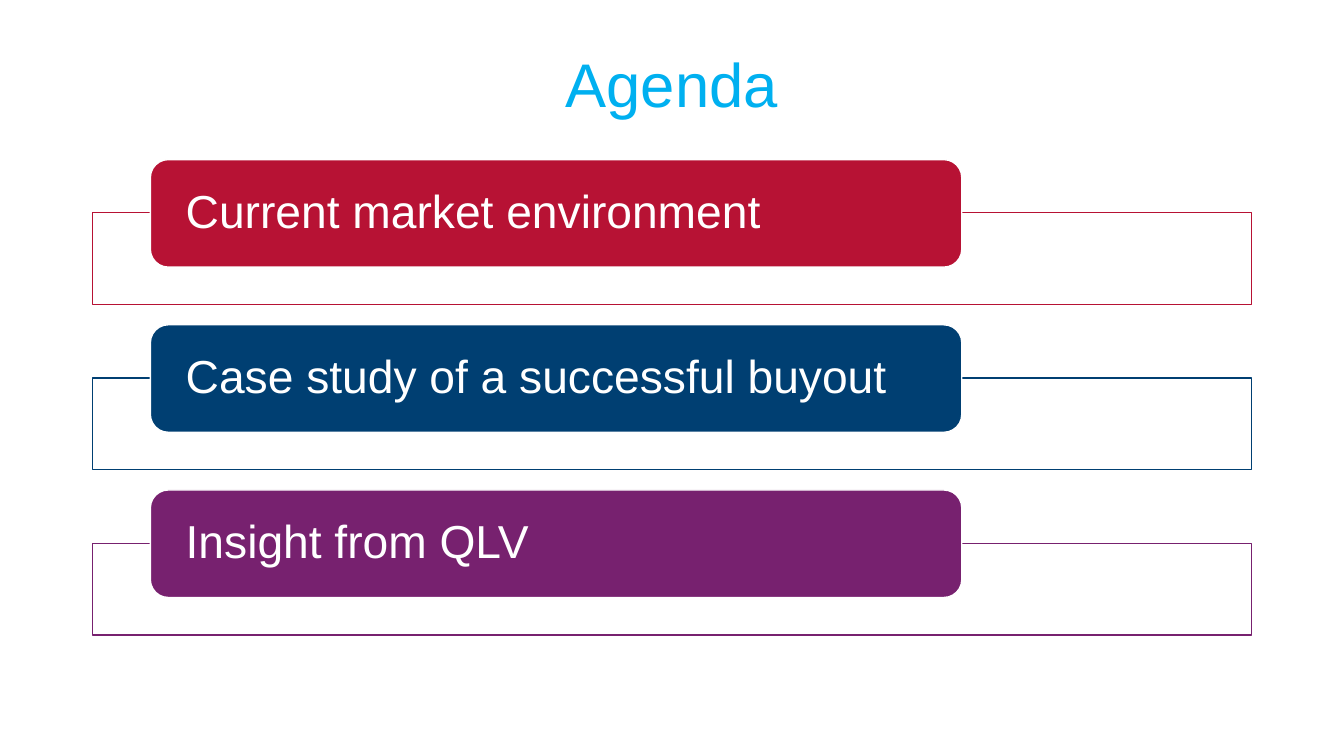
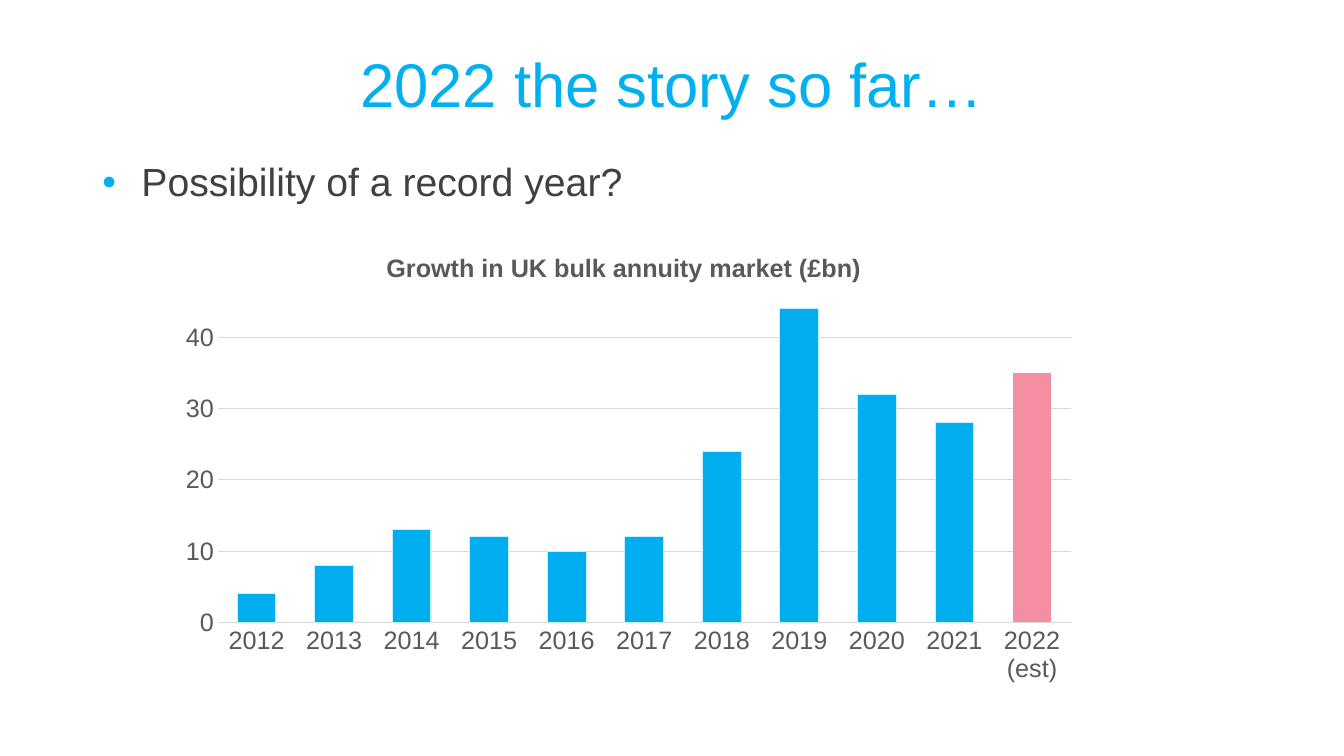
import pptx
import pptx.chart.data
import pptx.dml.color
import pptx.enum.chart
import pptx.enum.shapes
import pptx.enum.text
import pptx.oxml
import pptx.oxml.ns
import pptx.util

Pt = pptx.util.Pt
ALIGN = pptx.enum.text.PP_ALIGN
ANCHOR = pptx.enum.text.MSO_ANCHOR
SHAPE = pptx.enum.shapes.MSO_SHAPE
CHART_NS = pptx.oxml.ns.nsdecls("c")
DRAWING_NS = pptx.oxml.ns.nsdecls("a")

FONT = "Arial"
WHITE = "FFFFFF"
TITLE_BLUE = "00B0F0"
ACCENT_BLUE = "00AEEF"
PALE_BLUE = "C9F0FF"
PINK = "F48EA3"
BODY_GREY = "404040"
CHART_GREY = "595959"
GRID_GREY = "D9D9D9"

CONTENT_LEFT = 66
CONTENT_WIDTH = 828

AGENDA = [
    ("Current market environment", "B71234"),
    ("Case study of a successful buyout", "003F72"),
    ("Insight from QLV", "77216F"),
]
MARKET = {
    "2012": 4, "2013": 8, "2014": 13, "2015": 12, "2016": 10, "2017": 12,
    "2018": 24, "2019": 44, "2020": 32, "2021": 28, "2022 (est)": 35,
}


def rgb(color):
    return pptx.dml.color.RGBColor.from_string(color)


def style_font(font, size, color, bold=False):
    font.name = FONT
    font.size = Pt(size)
    font.bold = bold
    font.color.rgb = rgb(color)


def style_line(line, color, width):
    line.color.rgb = rgb(color)
    line.width = Pt(width)


def write_text(frame, text, size, color, anchor=ANCHOR.MIDDLE, align=ALIGN.LEFT):
    frame.word_wrap = True
    frame.vertical_anchor = anchor
    paragraph = frame.paragraphs[0]
    paragraph.text = text
    paragraph.alignment = align
    paragraph.line_spacing = 0.9
    style_font(paragraph.font, size, color)
    return paragraph


def add_text_box(slide, left, top, width, height):
    box = slide.shapes.add_textbox(Pt(left), Pt(top), Pt(width), Pt(height))
    return box.text_frame


def add_titled_slide(presentation, title):
    slide = presentation.slides.add_slide(presentation.slide_layouts[6])
    frame = add_text_box(slide, CONTENT_LEFT, 20, CONTENT_WIDTH, 85)
    write_text(frame, title, 44, TITLE_BLUE, align=ALIGN.CENTER)
    return slide


def add_box(slide, kind, left, top, width, height, fill, outline):
    shape = slide.shapes.add_shape(kind, Pt(left), Pt(top), Pt(width), Pt(height))
    shape.shadow.inherit = False
    shape.fill.solid()
    shape.fill.fore_color.rgb = rgb(fill)
    style_line(shape.line, outline, 1)
    return shape


def add_agenda_item(slide, top, text, color):
    """Draw a coloured label overlapping the top edge of an outlined frame."""
    add_box(slide, SHAPE.RECTANGLE, CONTENT_LEFT, top + 38, CONTENT_WIDTH, 65.5,
            WHITE, color)
    label = add_box(slide, SHAPE.ROUNDED_RECTANGLE, 107.4, top, 579.6, 76.8,
                    color, WHITE)
    frame = label.text_frame
    frame.margin_left = frame.margin_right = Pt(21.5)
    write_text(frame, text, 33, WHITE)


def add_bullet(slide, text):
    frame = add_text_box(slide, CONTENT_LEFT, 113, CONTENT_WIDTH, 45)
    properties = frame.paragraphs[0]._p.get_or_add_pPr()
    properties.set("marL", str(Pt(28)))
    properties.set("indent", str(-Pt(28)))
    for xml in (
        f'<a:buClr {DRAWING_NS}><a:srgbClr val="{ACCENT_BLUE}"/></a:buClr>',
        f'<a:buFont {DRAWING_NS} typeface="{FONT}"/>',
        f'<a:buChar {DRAWING_NS} char="•"/>',
    ):
        properties.append(pptx.oxml.parse_xml(xml))
    write_text(frame, text, 28, BODY_GREY, anchor=ANCHOR.TOP)


def manual_layout(target="", **fractions):
    """Return a chart layout placed by fractions of the chart area."""
    target_xml = f'<c:layoutTarget val="{target}"/>' if target else ""
    modes = "".join(f'<c:{axis}Mode val="edge"/>' for axis in "xy")
    values = "".join(f'<c:{key} val="{value}"/>' for key, value in fractions.items())
    return pptx.oxml.parse_xml(
        f"<c:layout {CHART_NS}><c:manualLayout>{target_xml}{modes}{values}"
        "</c:manualLayout></c:layout>"
    )


def replace_layout(parent, layout, index):
    for old in parent.findall(pptx.oxml.ns.qn("c:layout")):
        parent.remove(old)
    parent.insert(index, layout)


def style_axes(chart):
    for axis in (chart.category_axis, chart.value_axis):
        axis.major_tick_mark = pptx.enum.chart.XL_TICK_MARK.NONE
        axis.minor_tick_mark = pptx.enum.chart.XL_TICK_MARK.NONE
        style_font(axis.tick_labels.font, 18, CHART_GREY)
    style_line(chart.category_axis.format.line, GRID_GREY, 0.75)
    value_axis = chart.value_axis
    value_axis.format.line.fill.background()
    value_axis.minimum_scale = 0
    value_axis.maximum_scale = 45
    value_axis.major_unit = 10
    style_line(value_axis.major_gridlines.format.line, GRID_GREY, 0.75)


def add_market_chart(slide):
    data = pptx.chart.data.CategoryChartData()
    data.categories = list(MARKET)
    data.add_series("Series 1", list(MARKET.values()))
    chart = slide.shapes.add_chart(
        pptx.enum.chart.XL_CHART_TYPE.COLUMN_CLUSTERED,
        Pt(108.7), Pt(162), Pt(669.6), Pt(357.8), data,
    ).chart
    style_font(chart.font, 18, CHART_GREY)
    chart.has_legend = False

    title_frame = chart.chart_title.text_frame
    title_frame.text = "Growth in UK bulk annuity market (£bn)"
    style_font(title_frame.paragraphs[0].font, 18, CHART_GREY, bold=True)
    replace_layout(chart.chart_title._element, manual_layout(x=0.245, y=0.04), 1)

    style_axes(chart)
    plot = chart.plots[0]
    plot.gap_width = 100
    plot.vary_by_categories = False
    series = plot.series[0]
    series.format.fill.solid()
    series.format.fill.fore_color.rgb = rgb(ACCENT_BLUE)
    style_line(series.format.line, PALE_BLUE, 0.75)
    estimate = series.points[len(MARKET) - 1].format
    estimate.fill.solid()
    estimate.fill.fore_color.rgb = rgb(PINK)
    estimate.line.fill.background()

    plot_area = chart._chartSpace.chart.plotArea
    replace_layout(plot_area, manual_layout("inner", x=0.07, y=0.15, w=0.91, h=0.64), 0)


def main():
    presentation = pptx.Presentation()
    presentation.slide_width = Pt(960)
    presentation.slide_height = Pt(540)

    agenda = add_titled_slide(presentation, "Agenda")
    for index, (text, color) in enumerate(AGENDA):
        add_agenda_item(agenda, 114 + 118 * index, text, color)

    story = add_titled_slide(presentation, "2022 the story so far…")
    add_bullet(story, "Possibility of a record year?")
    add_market_chart(story)

    presentation.save("out.pptx")


if __name__ == "__main__":
    main()
